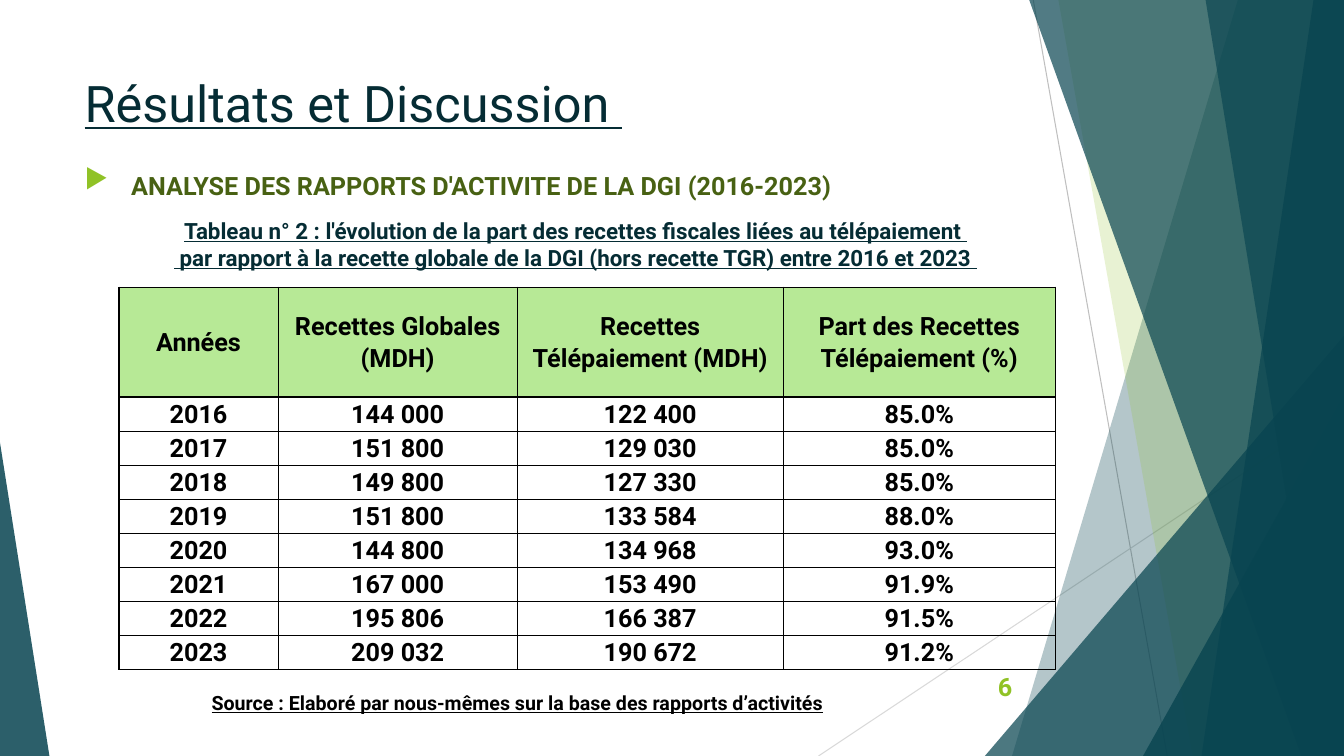
from dataclasses import dataclass

from lxml import etree
from pptx import Presentation
from pptx import util as u
from pptx.dml.color import RGBColor
from pptx.enum import shapes, text
from pptx.oxml.ns import qn


@dataclass(frozen=True)
class Theme:
    font: str = "Roboto"
    petrol: str = "084450"
    leaf: str = "90C226"
    moss: str = "486113"
    ink: str = "052C34"
    black: str = "000000"
    header: str = "B7E996"
    title_size: int = 36
    body_size: int = 18
    caption_size: int = 16
    source_size: int = 14


THEME = Theme()
WIDTH, HEIGHT = u.Inches(13.33), u.Inches(7.5)

# Backdrop, in percent of the slide's width and height
LINES = [((76.88, 0), (86.85, 100), "BFBFBF"), ((100, 53.73), (60.9, 100), "D9D9D9")]
# Left edge at the top, left edge at the bottom, colour, opacity
BACK_SHARDS = [(92.1, 75.3, THEME.petrol, 30), (78.75, 88.73, THEME.leaf, 20)]
FRONT_SHARDS = [
    (76.58, 96.83, THEME.petrol, 70),
    (97.73, 89.4, THEME.petrol, 70),
    (89.7, 98.85, THEME.petrol, 65),
]

HEADINGS = [
    "Années",
    "Recettes Globales (MDH)",
    "Recettes Télépaiement (MDH)",
    "Part des Recettes Télépaiement (%)",
]
RECEIPTS = [
    ("2016", "144 000", "122 400", "85.0%"),
    ("2017", "151 800", "129 030", "85.0%"),
    ("2018", "149 800", "127 330", "85.0%"),
    ("2019", "151 800", "133 584", "88.0%"),
    ("2020", "144 800", "134 968", "93.0%"),
    ("2021", "167 000", "153 490", "91.9%"),
    ("2022", "195 806", "166 387", "91.5%"),
    ("2023", "209 032", "190 672", "91.2%"),
]
COLUMN_SHARES = [11.85, 17.78, 19.8, 20.25]
HEADER_SHARE, ROW_SHARE = 14.53, 4.5


def across(share):
    return u.Emu(round(WIDTH * share / 100))


def down(share):
    return u.Emu(round(HEIGHT * share / 100))


def box(left, top, width, height):
    return across(left), down(top), across(width), down(height)


def paint(shape, color, opacity):
    shape.shadow.inherit = False
    shape.line.fill.background()
    shape.fill.solid()
    shape.fill.fore_color.rgb = RGBColor.from_string(color)
    color_element = shape.fill._xPr.find(qn("a:solidFill"))[0]
    etree.SubElement(color_element, qn("a:alpha"), val=str(opacity * 1000))


def add_line(slide, start, end, color):
    line = slide.shapes.add_connector(
        shapes.MSO_CONNECTOR.STRAIGHT,
        across(start[0]), down(start[1]), across(end[0]), down(end[1]),
    )
    line.line.color.rgb = RGBColor.from_string(color)
    line.line.width = u.Pt(0.75)
    etree.SubElement(line._element.spPr, qn("a:effectLst"))


def add_shard(slide, top_left, bottom_left, color, opacity):
    builder = slide.shapes.build_freeform(across(top_left), 0)
    builder.add_line_segments([(WIDTH, 0), (WIDTH, HEIGHT), (across(bottom_left), HEIGHT)])
    paint(builder.convert_to_shape(), color, opacity)


def add_triangle(slide, left, top, width, apex, opacity):
    shape = slide.shapes.add_shape(
        shapes.MSO_SHAPE.ISOSCELES_TRIANGLE, *box(left, top, width, 100 - top)
    )
    shape.adjustments[0] = apex
    paint(shape, THEME.petrol, opacity)


def add_backdrop(slide):
    for line in LINES:
        add_line(slide, *line)
    for shard in BACK_SHARDS:
        add_shard(slide, *shard)
    add_triangle(slide, 73.28, 44.4, 26.72, 1, 72)
    for shard in FRONT_SHARDS:
        add_shard(slide, *shard)
    add_triangle(slide, 85.05, 52.4, 14.95, 1, 80)
    add_triangle(slide, 0, 58.53, 3.68, 0, 85)


def style(paragraph, size, color, bold=True, underline=False, align=text.PP_ALIGN.LEFT):
    paragraph.alignment = align
    font = paragraph.font
    font.name, font.size, font.bold, font.underline = THEME.font, u.Pt(size), bold, underline
    font.color.rgb = RGBColor.from_string(color)


def add_title(slide, wording):
    title = slide.shapes.title
    title.left, title.top, title.width, title.height = box(5.55, 8.93, 70.5, 19.2)
    title.text_frame.text = wording
    title.text_frame.vertical_anchor = text.MSO_ANCHOR.TOP
    style(title.text_frame.paragraphs[0], THEME.title_size, THEME.ink, False, True)


def add_text(slide, place, wording, size, color, anchor=text.MSO_ANCHOR.TOP, wrap=True, **look):
    frame = slide.shapes.add_textbox(*box(*place)).text_frame
    frame.word_wrap = wrap
    frame.vertical_anchor = anchor
    frame.text = wording
    for paragraph in frame.paragraphs:
        style(paragraph, size, color, **look)
    return frame


def add_bullet(paragraph):
    properties = paragraph._p.get_or_add_pPr()
    properties.set("marL", str(u.Inches(0.38)))
    properties.set("indent", str(-u.Inches(0.38)))
    color = etree.SubElement(properties, qn("a:buClr"))
    etree.SubElement(color, qn("a:srgbClr"), val=THEME.leaf)
    etree.SubElement(properties, qn("a:buSzPct"), val="80000")
    etree.SubElement(properties, qn("a:buChar"), char="▶")
    # The bullet properties stand before the default run properties
    properties.append(properties.find(qn("a:defRPr")))


def add_lead(slide, wording):
    frame = add_text(slide, (5.55, 20.8, 90.15, 7), " ", THEME.body_size, THEME.moss)
    paragraph = frame.paragraphs[0]
    paragraph.space_before = u.Pt(10)
    paragraph.runs[0].font.size = u.Pt(24)
    paragraph.add_run().text = wording
    add_bullet(paragraph)


def add_borders(cell):
    properties = cell._tc.get_or_add_tcPr()
    for position, side in enumerate(("lnL", "lnR", "lnT", "lnB")):
        border = etree.Element(qn(f"a:{side}"), w=str(u.Pt(1)))
        fill = etree.SubElement(border, qn("a:solidFill"))
        etree.SubElement(fill, qn("a:srgbClr"), val=THEME.black)
        properties.insert(position, border)


def fill_cell(cell, wording, is_header):
    cell.text = wording
    cell.vertical_anchor = text.MSO_ANCHOR.MIDDLE
    cell.margin_left = cell.margin_right = u.Inches(0.07)
    cell.margin_top = cell.margin_bottom = 0
    paragraph = cell.text_frame.paragraphs[0]
    paragraph.line_spacing = 1.07
    style(paragraph, THEME.body_size, THEME.black, align=text.PP_ALIGN.CENTER)
    if is_header:
        cell.fill.solid()
        cell.fill.fore_color.rgb = RGBColor.from_string(THEME.header)
    else:
        cell.fill.background()
    add_borders(cell)


def add_receipts_table(slide):
    rows = [HEADINGS, *RECEIPTS]
    height = HEADER_SHARE + ROW_SHARE * len(RECEIPTS)
    place = box(8.85, 38, sum(COLUMN_SHARES), height)
    table = slide.shapes.add_table(len(rows), len(HEADINGS), *place).table
    table.horz_banding = False
    for column, share in zip(table.columns, COLUMN_SHARES):
        column.width = across(share)
    for index, values in enumerate(rows):
        table.rows[index].height = down(ROW_SHARE if index else HEADER_SHARE)
        for cell, wording in zip(table.rows[index].cells, values):
            fill_cell(cell, wording, index == 0)


def main():
    presentation = Presentation()
    presentation.slide_width, presentation.slide_height = WIDTH, HEIGHT
    slide = presentation.slides.add_slide(presentation.slide_layouts[5])
    middle = text.MSO_ANCHOR.MIDDLE

    add_backdrop(slide)
    # Headings
    add_title(slide, "Résultats et Discussion ")
    add_lead(slide, "ANALYSE DES RAPPORTS D'ACTIVITE DE LA DGI (2016-2023)")
    # Table with its caption and source
    caption = (
        "Tableau n° 2 : l'évolution de la part des recettes fiscales liées au télépaiement \n"
        " par rapport à la recette globale de la DGI (hors recette TGR) entre 2016 et 2023 "
    )
    add_text(slide, (9.83, 28, 66, 8.53), caption, THEME.caption_size, THEME.ink,
             middle, False, underline=True, align=text.PP_ALIGN.CENTER)
    add_receipts_table(slide)
    source = "Source : Elaboré par nous-mêmes sur la base des rapports d’activités"
    add_text(slide, (15, 90.8, 69.6, 4.53), source, THEME.source_size, THEME.black,
             underline=True)
    # Page number
    add_text(slide, (70.43, 88.13, 5.63, 5.33), "6", THEME.body_size, THEME.leaf,
             middle, align=text.PP_ALIGN.RIGHT)
    presentation.save("out.pptx")


if __name__ == "__main__":
    main()
